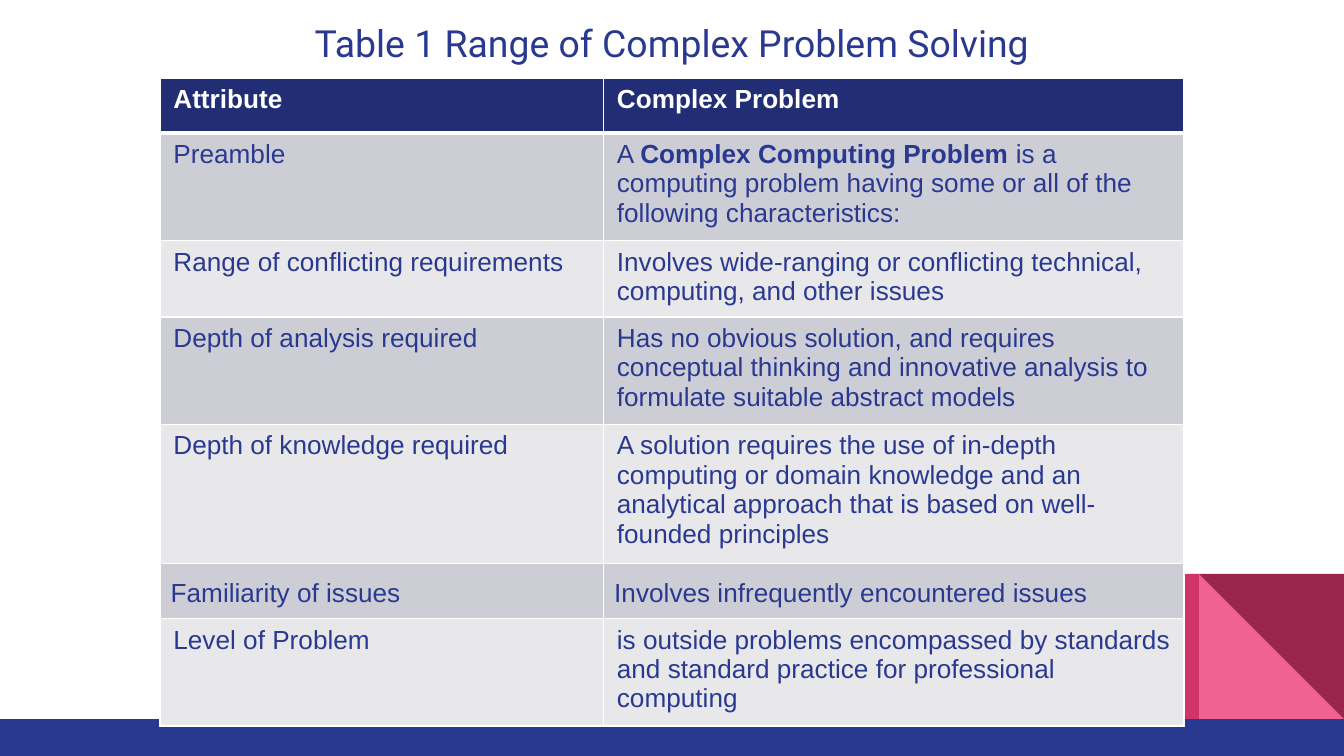
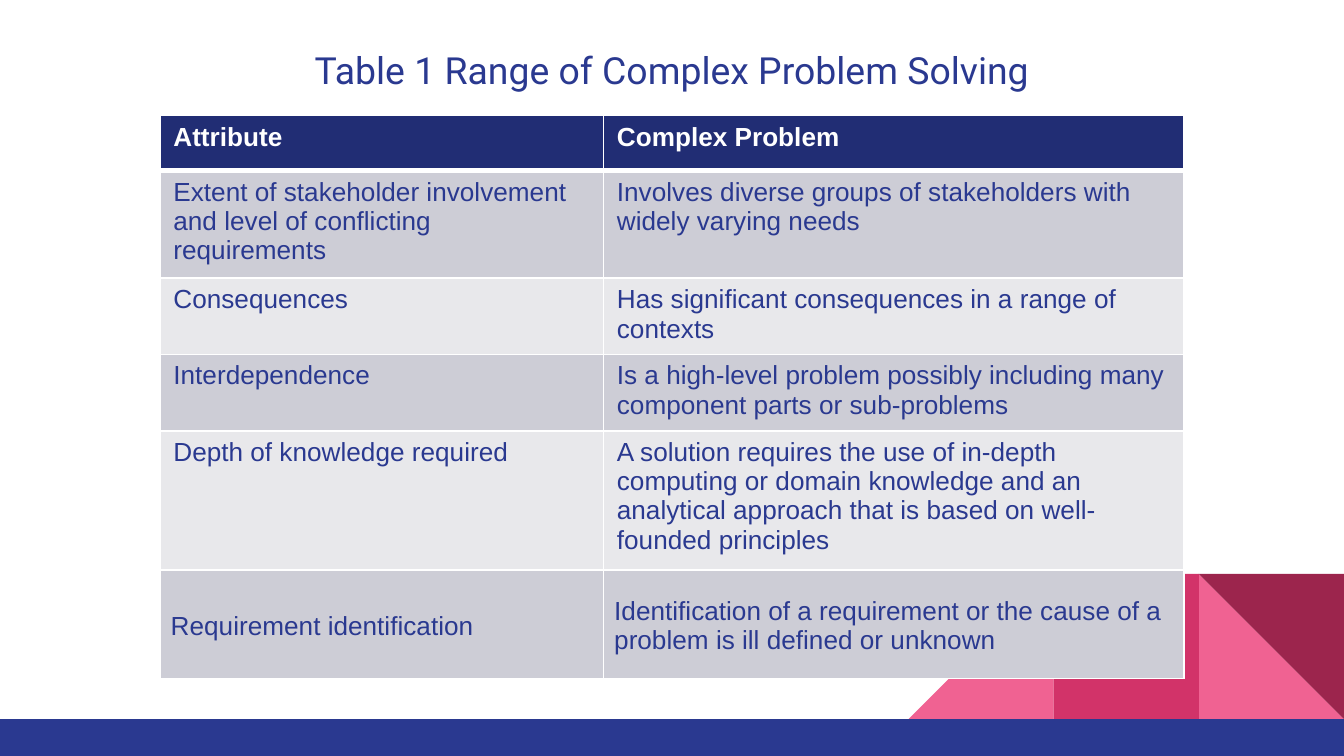
import dataclasses

import lxml.etree
import pptx
import pptx.dml.color
import pptx.enum.shapes
import pptx.enum.text
import pptx.oxml.ns
import pptx.util

SHAPE = pptx.enum.shapes.MSO_SHAPE
ANCHOR = pptx.enum.text.MSO_ANCHOR
ALIGN = pptx.enum.text.PP_ALIGN


@dataclasses.dataclass(frozen=True)
class Theme:
    blue: str = "2A3990"
    navy: str = "212D74"
    white: str = "FFFFFF"
    pink: str = "F06292"
    rose: str = "D23369"
    wine: str = "9C254D"
    bands: tuple = ("CDCDD6", "E8E8EB")
    title_font: str = "Roboto"
    table_font: str = "Arial"
    title_size: int = 20
    table_size: int = 14
    thin_rule: int = 1
    header_rule: int = 3


@dataclasses.dataclass(frozen=True)
class Row:
    attribute: str
    problem: tuple
    height: float = 4.1
    centred: bool = False


class Builder:
    UNIT = pptx.util.Inches(0.1)
    COLUMNS = 100
    ROWS = 56.25

    def __init__(self, theme):
        self.theme = theme
        self.deck = pptx.Presentation()
        self.deck.slide_width = self.units(self.COLUMNS)
        self.deck.slide_height = self.units(self.ROWS)
        self.page = None

    def units(self, *counts):
        lengths = [pptx.util.Emu(round(count * self.UNIT)) for count in counts]
        return lengths if len(lengths) > 1 else lengths[0]

    def colour(self, value):
        return pptx.dml.color.RGBColor.from_string(value)

    def new_page(self):
        self.page = self.deck.slides.add_slide(self.deck.slide_layouts[6])
        background = self.page.background.fill
        background.solid()
        background.fore_color.rgb = self.colour(self.theme.white)
        self.decoration()

    def shape(self, kind, left, top, width, height, fill, rotation=0):
        block = self.page.shapes.add_shape(kind, *self.units(left, top, width, height))
        block.shadow.inherit = False
        block.fill.solid()
        block.fill.fore_color.rgb = self.colour(fill)
        block.line.fill.background()
        block.rotation = rotation

    def decoration(self):
        theme = self.theme
        side, band = 10.8, 2.75
        top = self.ROWS - band - side
        tiles = [
            (1, SHAPE.RIGHT_TRIANGLE, theme.pink, 0),
            (3, SHAPE.RIGHT_TRIANGLE, theme.pink, 270),
            (2, SHAPE.RECTANGLE, theme.rose, 0),
            (1, SHAPE.RIGHT_TRIANGLE, theme.wine, 180),
        ]
        for place, kind, fill, rotation in tiles:
            self.shape(kind, self.COLUMNS - place * side, top, side, side, fill, rotation)
        self.shape(SHAPE.RECTANGLE, 0, self.ROWS - band, self.COLUMNS, band, theme.blue)

    def span(self, para, text, font, size, colour, bold=False):
        span = para.add_run()
        span.text = text
        span.font.name = font
        span.font.size = pptx.util.Pt(size)
        span.font.bold = bold
        span.font.color.rgb = self.colour(colour)

    def title(self, text, top):
        theme = self.theme
        box = self.page.shapes.add_textbox(*self.units(3.4, top, 93.2, 6.6))
        frame = box.text_frame
        frame.word_wrap = True
        frame.margin_left = frame.margin_right = self.UNIT
        frame.margin_top = frame.margin_bottom = self.UNIT
        para = frame.paragraphs[0]
        para.alignment = ALIGN.CENTER
        self.span(para, text, theme.title_font, theme.title_size, theme.blue)

    def border(self, cell, bottom):
        properties = cell._tc.get_or_add_tcPr()
        qualify = pptx.oxml.ns.qn
        widths = [("L", self.theme.thin_rule), ("R", self.theme.thin_rule),
                  ("T", self.theme.thin_rule), ("B", bottom)]
        for place, (side, width) in enumerate(widths):
            line = lxml.etree.Element(qualify(f"a:ln{side}"), w=str(pptx.util.Pt(width)))
            fill = lxml.etree.SubElement(line, qualify("a:solidFill"))
            lxml.etree.SubElement(fill, qualify("a:srgbClr"), val=self.theme.white)
            properties.insert(place, line)

    def cell(self, cell, spans, fill, colour, header=False, centred=False):
        theme = self.theme
        cell.fill.solid()
        cell.fill.fore_color.rgb = self.colour(fill)
        self.border(cell, theme.header_rule if header else theme.thin_rule)
        if centred:
            cell.vertical_anchor = ANCHOR.MIDDLE
            cell.margin_left, cell.margin_top, cell.margin_bottom = self.units(0.8, 0.6, 0.3)
        para = cell.text_frame.paragraphs[0]
        for text, bold in spans:
            self.span(para, text, theme.table_font, theme.table_size, colour, bold)

    def table(self, headings, rows, top):
        theme = self.theme
        widths = (33, 43.2)
        heights = [4.1] + [row.height for row in rows]
        frame = self.page.shapes.add_table(
            len(heights), len(widths), *self.units(11.9, top, sum(widths), sum(heights)))
        table = frame.table
        for column, width in zip(table.columns, widths):
            column.width = self.units(width)
        for line, height in zip(table.rows, heights):
            line.height = self.units(height)
        for column, heading in enumerate(headings):
            self.cell(table.cell(0, column), [(heading, True)], theme.navy, theme.white,
                      header=True)
        for index, row in enumerate(rows):
            fill = theme.bands[index % len(theme.bands)]
            for column, spans in enumerate((plain(row.attribute), row.problem)):
                self.cell(table.cell(index + 1, column), spans, fill, theme.blue,
                          centred=row.centred)


def plain(text):
    return ((text, False),)


TITLE = "Table 1 Range of Complex Problem Solving"
HEADINGS = ("Attribute", "Complex Problem")
KNOWLEDGE = Row("Depth of knowledge required", plain(
    "A solution requires the use of in-depth computing or domain knowledge and an "
    "analytical approach that is based on well-founded principles"))

FIRST_ROWS = [
    Row("Preamble", (
        ("A ", False),
        ("Complex Computing Problem", True),
        (" is a computing problem having some or all of the following characteristics:",
         False))),
    Row("Range of conflicting requirements", plain(
        "Involves wide-ranging or conflicting technical, computing, and other issues")),
    Row("Depth of analysis required", plain(
        "Has no obvious solution, and requires conceptual thinking and innovative "
        "analysis to formulate suitable abstract models")),
    KNOWLEDGE,
    Row("Familiarity of issues", plain("Involves infrequently encountered issues"),
        centred=True),
    Row("Level of Problem", plain(
        "is outside problems encompassed by standards and standard practice for "
        "professional computing")),
]

SECOND_ROWS = [
    Row("Extent of stakeholder involvement and level of conflicting requirements", plain(
        "Involves diverse groups of stakeholders with widely varying needs")),
    Row("Consequences", plain("Has significant consequences in a range of contexts")),
    Row("Interdependence", plain(
        "Is a high-level problem possibly including many component parts or sub-problems")),
    KNOWLEDGE,
    Row("Requirement identification", plain(
        "Identification of a requirement or the cause of a problem is ill defined or "
        "unknown"), height=8.1, centred=True),
]


def main():
    builder = Builder(Theme())
    for title_top, table_top, rows in ((0.5, 5.8, FIRST_ROWS), (2.5, 8.6, SECOND_ROWS)):
        builder.new_page()
        builder.title(TITLE, title_top)
        builder.table(HEADINGS, rows, table_top)
    builder.deck.save("out.pptx")


if __name__ == "__main__":
    main()
